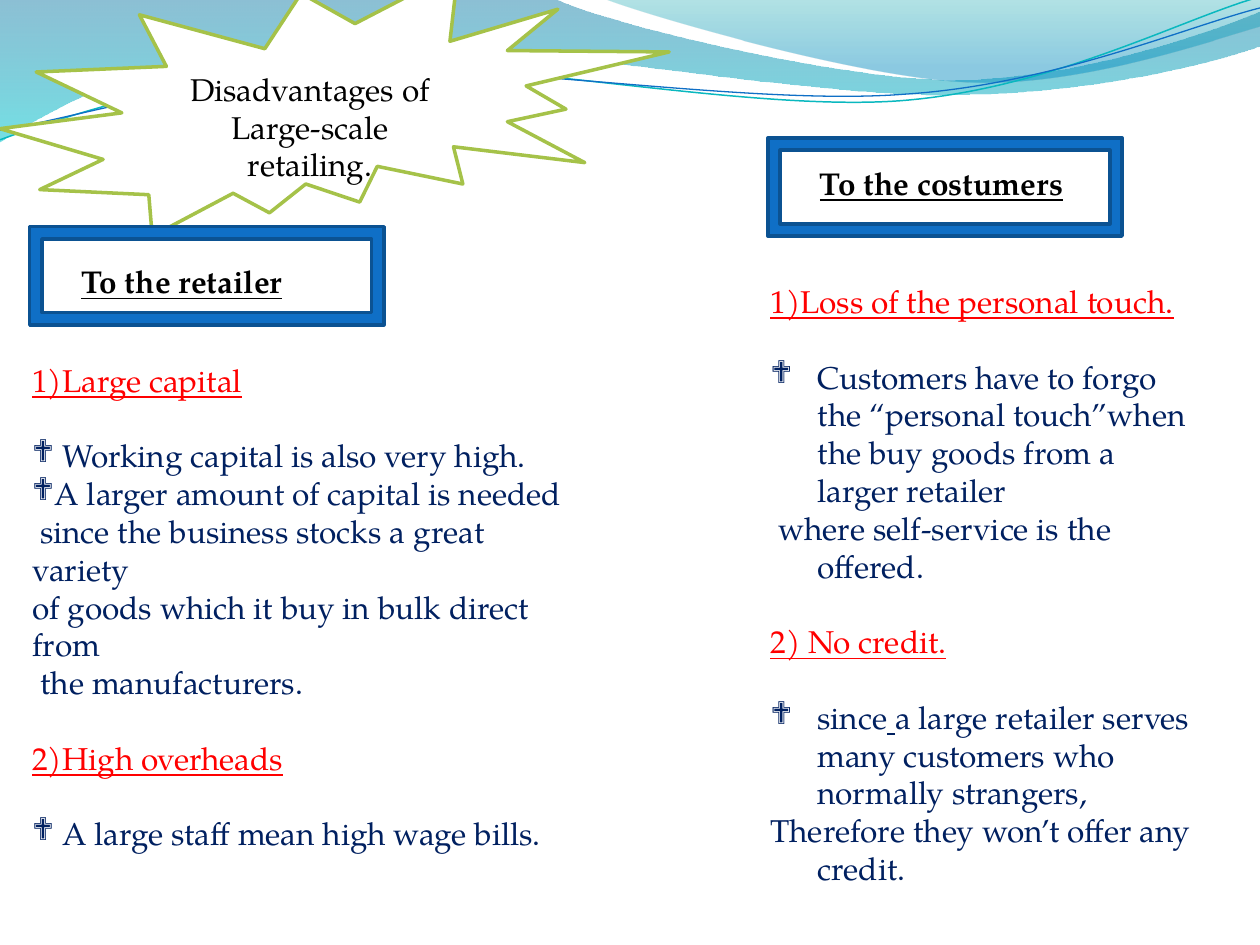
"""Build a slide on the disadvantages of large-scale retailing."""
from lxml.etree import SubElement
from pptx import Presentation
from pptx.dml.color import RGBColor
from pptx.enum.shapes import MSO_SHAPE
from pptx.enum.text import MSO_ANCHOR, PP_ALIGN
from pptx.oxml.ns import qn
from pptx.util import Cm, Pt

FACE = "TeX Gyre Pagella"
RED, NAVY = "FF0000", "002060"


def hue(code):
    return RGBColor.from_string(code)


def style(par, code, bold=False, under=False):
    font = par.font
    font.name, font.size = FACE, Pt(18)
    font.bold, font.underline = bold, under
    font.color.rgb = hue(code)


deck = Presentation()
deck.slide_width, deck.slide_height = Cm(25.4), Cm(19.05)
slide = deck.slides.add_slide(deck.slide_layouts[6])
shapes = slide.shapes

bands = [
    ((0, 0), [(11.18, -0.03), (12.09, 0.43, 16.87, 1.6, 19.25, 1.6),
              (21.67, 1.6, 24.33, 0.66, 25.4, 0.23), (25.43, 0.91),
              (24.97, 1.12, 22.1, 1.93, 18.95, 1.91),
              (15.8, 1.91, 9.7, 0.71, 6.53, 0.86),
              (3.28, 0.91, 1.17, 2.11, -0.03, 2.87)],
     [(0, "0074A1", 45), (1, "00C6CF", 55)], None),
    ((12.17, -0.03), [(12.93, 0.28, 17.32, 1.57, 19.53, 1.65),
                      (21.74, 1.75, 24.41, 0.81, 25.4, 0.53), (25.4, 0)],
     [(0, "00A1A9", 30), (0.8, "008BBF", 45)], None),
    ((-0.05, 2.22), [(1.19, 1.83, 4.01, 1.04, 7.06, 1.05),
                     (10.06, 1.07, 15.01, 2.36, 18.08, 2.29),
                     (21.13, 2.21, 23.86, 0.91, 25.4, 0.55)],
     None, ("0AB8BF", 0.85)),
    ((-0.05, 2.03), [(1.16, 1.91, 4.17, 1.14, 7.19, 1.17),
                     (10.24, 1.18, 15.14, 2.25, 18.19, 2.16),
                     (21.21, 2.11, 23.93, 1.07, 25.45, 0.76)],
     None, ("0F6FC6", 0.75)),
]
group = None
for start, steps, stops, line in bands:
    home = shapes
    if line:
        group = group or shapes.add_group_shape()
        home = group.shapes
    pen = home.build_freeform(Cm(start[0]), Cm(start[1]))
    pen.add_line_segments([(Cm(s[-2]), Cm(s[-1])) for s in steps],
                          close=bool(stops))
    wave = pen.convert_to_shape()
    wave.shadow.inherit = False
    left = min(Cm(s[-2]) for s in [start] + steps)
    top = min(Cm(s[-1]) for s in [start] + steps)
    for leg, step in zip(list(wave._element.iter(qn("a:lnTo"))), steps):
        if len(step) == 6:
            leg.tag = qn("a:cubicBezTo")
            leg.clear()
            for x, y in zip(step[::2], step[1::2]):
                SubElement(leg, qn("a:pt"), x=str(Cm(x) - left), y=str(Cm(y) - top))
    if stops:
        wave.line.fill.background()
        wave.fill.gradient()
        wave.fill.gradient_angle = 270
        for stop, (place, code, alpha) in zip(wave.fill.gradient_stops, stops):
            stop.position = place
            stop.color.rgb = hue(code)
        for tint, (_, _, alpha) in zip(wave._element.iter(qn("a:srgbClr")), stops):
            SubElement(tint, qn("a:alpha"), val=str(alpha * 1000))
    else:
        wave.fill.background()
        wave.line.color.rgb = hue(line[0])
        wave.line.width = Pt(line[1])
        wave.rotation = 357.3

presets = [
    (MSO_SHAPE.EXPLOSION2, 0, -0.6, 13.49, 5.36, "FFFFFF", "A5C249"),
    (MSO_SHAPE.FRAME, 0.6, 4.57, 7.14, 1.98, "0F6FC6", "0B5292"),
    (MSO_SHAPE.FRAME, 15.48, 2.78, 7.14, 1.98, "0F6FC6", "0B5292"),
]
for kind, x, y, w, h, fill, edge in presets:
    item = shapes.add_shape(kind, Cm(x), Cm(y), Cm(w), Cm(h))
    item.shadow.inherit = False
    item.fill.solid()
    item.fill.fore_color.rgb = hue(fill)
    item.line.color.rgb = hue(edge)
    item.line.width = Pt(2)
    if kind == MSO_SHAPE.EXPLOSION2:
        frame = item.text_frame
        frame.word_wrap = True
        frame.vertical_anchor = MSO_ANCHOR.MIDDLE
        frame.margin_top = Cm(0.89)
        title = frame.paragraphs[0]
        title.text = "Disadvantages of Large-scale retailing."
        title.alignment = PP_ALIGN.CENTER
        style(title, "000000")

labels = [("To the retailer", 1.39, 5.16, 4.75),
          ("To the costumers", 16.28, 3.18, 5.64)]
for text, x, y, w in labels:
    frame = shapes.add_textbox(Cm(x), Cm(y), Cm(w), Cm(1.02)).text_frame
    frame.word_wrap = False
    frame.paragraphs[0].text = text
    style(frame.paragraphs[0], "000000", True, True)

columns = [
    (0.4, 7.15, 11.7, 8.71, 0, [
        ("head", "1)Large capital"),
        ("first", " Working capital is also very high."),
        ("item", "A larger amount of capital is needed"),
        ("plain", " since the business stocks a great variety"),
        ("plain", "of goods which it buy in bulk direct from"),
        ("plain", " the manufacturers."),
        ("head", "2)High overheads"),
        ("first", " A large staff mean high wage bills.")]),
    (15.28, 5.56, 9.12, 12.57, 0.95, [
        ("head", "1)Loss of the personal touch."),
        ("first", "Customers have to forgo the “personal touch”when "
                  "the buy goods from a larger retailer"),
        ("plain", " where self-service is the offered."),
        ("head", "2) No credit."),
        ("first", "since| |a large retailer serves many customers "
                  "who normally strangers,"),
        ("plain", "Therefore they won’t offer any credit.")]),
]
for x, y, w, h, dent, rows in columns:
    frame = shapes.add_textbox(Cm(x), Cm(y), Cm(w), Cm(h)).text_frame
    frame.word_wrap = True
    for n, (role, text) in enumerate(rows):
        par = frame.add_paragraph() if n else frame.paragraphs[0]
        for part in text.split("|"):
            run = par.add_run()
            run.text = part
            if part == " ":
                run.font.underline = True
        props = par._p.get_or_add_pPr()
        props.set("marL", str(Cm(dent)))
        props.set("indent", str(-Cm(dent)))
        if role in ("first", "item"):
            SubElement(props, qn("a:buFont"), typeface="Wingdings")
            SubElement(props, qn("a:buChar"), char="❖")
        if n and role in ("head", "first"):
            par.space_before = Pt(21.6)
        style(par, RED if role == "head" else NAVY, under=role == "head")

deck.save("out.pptx")
